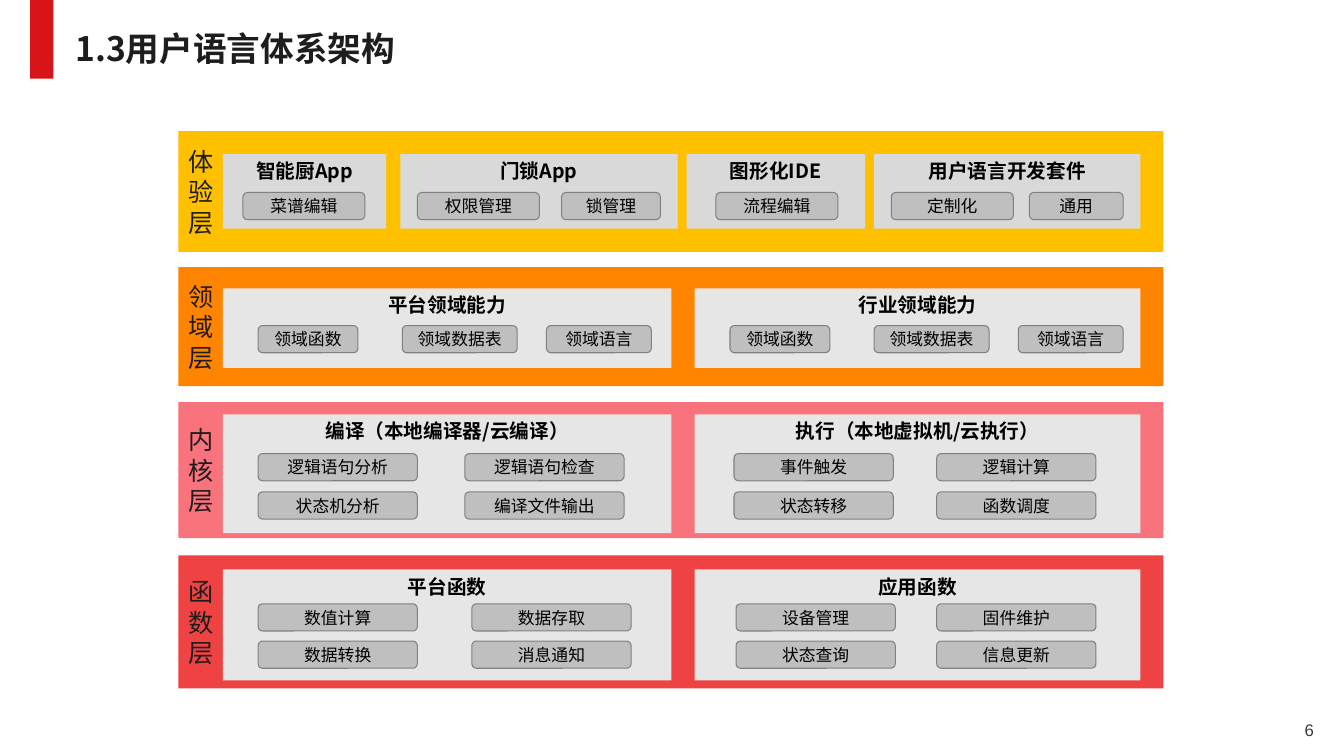
"""Build the slide showing the four-layer architecture of the user language."""
from pptx import Presentation
from pptx import util as u
from pptx.dml.color import RGBColor
from pptx.enum import shapes, text
from pptx.oxml.ns import qn

FONT = "Noto Sans CJK SC"
RED = RGBColor(0xD7, 0x14, 0x18)
INK = RGBColor(0x1E, 0x1C, 0x1C)
BLACK = RGBColor(0, 0, 0)
PAGE_GREY = RGBColor(0x3B, 0x38, 0x38)
BUTTON_FILL = RGBColor(0xBF, 0xBF, 0xBF)
BUTTON_LINE = RGBColor(0x80, 0x80, 0x80)
PANEL_GREY = RGBColor(0xD9, 0xD9, 0xD9)
PANEL_LIGHT = RGBColor(0xE6, 0xE6, 0xE6)
YELLOW = RGBColor(0xFF, 0xC0, 0x00)
ORANGE = RGBColor(0xFF, 0x84, 0x00)
PINK = RGBColor(0xF8, 0x73, 0x7B)
CORAL = RGBColor(0xEF, 0x43, 0x43)

TITLE = "1.3用户语言体系架构"
PAGE = "6"
LAYER_LEFT, LAYER_WIDTH = 1.77, 9.77
BUTTON_HEIGHT = 0.27
LEFT_HALF, RIGHT_HALF = (2.21, 4.45), (6.89, 4.42)
DOMAIN_COLUMNS = [(0.35, 0.99), (1.78, 1.14), (3.21, 1.04)]
DOMAIN_NAMES = ["领域函数", "领域数据表", "领域语言"]

# layer: name, colour, (top, height), panel colour, (panel top, height), button row tops, panels
# panel: title, (left, width), button columns as (offset, width), button names row by row
LAYERS = [
    ("体验层", YELLOW, (1.3, 1.2), PANEL_GREY, (1.53, 0.74), [1.91], [
        ("智能厨App", (2.21, 1.62), [(0.2, 1.21)], ["菜谱编辑"]),
        ("门锁App", (3.97, 2.75), [(0.17, 1.21), (1.6, 0.98)], ["权限管理", "锁管理"]),
        ("图形化IDE", (6.81, 1.77), [(0.29, 1.21)], ["流程编辑"]),
        ("用户语言开发套件", (8.67, 2.64), [(0.17, 1.21), (1.54, 0.93)], ["定制化", "通用"]),
    ]),
    ("领域层", ORANGE, (2.65, 1.18), PANEL_LIGHT, (2.86, 0.79), [3.23], [
        ("平台领域能力", LEFT_HALF, DOMAIN_COLUMNS, DOMAIN_NAMES),
        ("行业领域能力", RIGHT_HALF, DOMAIN_COLUMNS, DOMAIN_NAMES),
    ]),
    ("内核层", PINK, (3.99, 1.35), PANEL_LIGHT, (4.11, 1.18), [4.5, 4.88], [
        ("编译（本地编译器/云编译）", LEFT_HALF, [(0.35, 1.58), (2.4, 1.58)],
         ["逻辑语句分析", "逻辑语句检查", "状态机分析", "编译文件输出"]),
        ("执行（本地虚拟机/云执行）", RIGHT_HALF, [(0.39, 1.58), (2.4, 1.58)],
         ["事件触发", "逻辑计算", "状态转移", "函数调度"]),
    ]),
    ("函数层", CORAL, (5.51, 1.32), PANEL_LIGHT, (5.65, 1.1), [5.99, 6.36], [
        ("平台函数", LEFT_HALF, [(0.35, 1.58), (2.47, 1.58)],
         ["数值计算", "数据存取", "数据转换", "消息通知"]),
        ("应用函数", RIGHT_HALF, [(0.41, 1.58), (2.4, 1.58)],
         ["设备管理", "固件维护", "状态查询", "信息更新"]),
    ]),
]


def write(shape, lines, size, color=BLACK, bold=False, font=FONT,
          align=text.PP_ALIGN.CENTER, anchor=text.MSO_ANCHOR.MIDDLE):
    frame = shape.text_frame
    frame.word_wrap = True
    frame.vertical_anchor = anchor
    frame.text = "\n".join(lines)
    for paragraph in frame.paragraphs:
        paragraph.alignment = align
        paragraph.line_spacing = u.Pt(round(size * 1.21, 1))
        for run in paragraph.runs:
            run.font.name = font
            run.font.size = u.Pt(size)
            run.font.bold = bold
            run.font.color.rgb = color
            east_asian = run.font._element.makeelement(qn("a:ea"), {"typeface": font})
            run.font._element.find(qn("a:latin")).addnext(east_asian)


def add_box(slide, box, fill, line=None, kind=shapes.MSO_SHAPE.RECTANGLE):
    shape = slide.shapes.add_shape(kind, *map(u.Inches, box))
    shape.shadow.inherit = False
    shape.fill.solid()
    shape.fill.fore_color.rgb = fill
    if line is None:
        shape.line.fill.background()
    else:
        shape.line.color.rgb = line
        shape.line.width = u.Pt(0.75)
    return shape


def add_panel(slide, panel, fill, top, height, row_tops):
    title, (left, width), columns, names = panel
    write(add_box(slide, (left, top, width, height), fill), [title], 14,
          bold=True, anchor=text.MSO_ANCHOR.TOP)
    for index, name in enumerate(names):
        row, column = divmod(index, len(columns))
        offset, button_width = columns[column]
        button = add_box(slide, (left + offset, row_tops[row], button_width, BUTTON_HEIGHT),
                         BUTTON_FILL, BUTTON_LINE, shapes.MSO_SHAPE.ROUNDED_RECTANGLE)
        write(button, [name], 12)


def main():
    presentation = Presentation()
    presentation.slide_width = u.Inches(13.33)
    presentation.slide_height = u.Inches(7.5)
    slide = presentation.slides.add_slide(presentation.slide_layouts[6])

    add_box(slide, (0.3, 0, 0.23, 0.78), RED)
    title = slide.shapes.add_textbox(*map(u.Inches, (0.65, 0.23, 11.5, 0.49)))
    write(title, [TITLE], 24, INK, bold=True, align=text.PP_ALIGN.LEFT)
    page = slide.shapes.add_textbox(*map(u.Inches, (10.13, 7.09, 3, 0.4)))
    write(page, [PAGE], 12, PAGE_GREY, font="Arial",
          align=text.PP_ALIGN.RIGHT, anchor=text.MSO_ANCHOR.TOP)

    for name, color, (top, height), panel_fill, panel_span, row_tops, panels in LAYERS:
        layer = add_box(slide, (LAYER_LEFT, top, LAYER_WIDTH, height), color)
        write(layer, name, 18, INK, align=text.PP_ALIGN.LEFT)
        for panel in panels:
            add_panel(slide, panel, panel_fill, *panel_span, row_tops)

    presentation.save("out.pptx")


if __name__ == "__main__":
    main()
